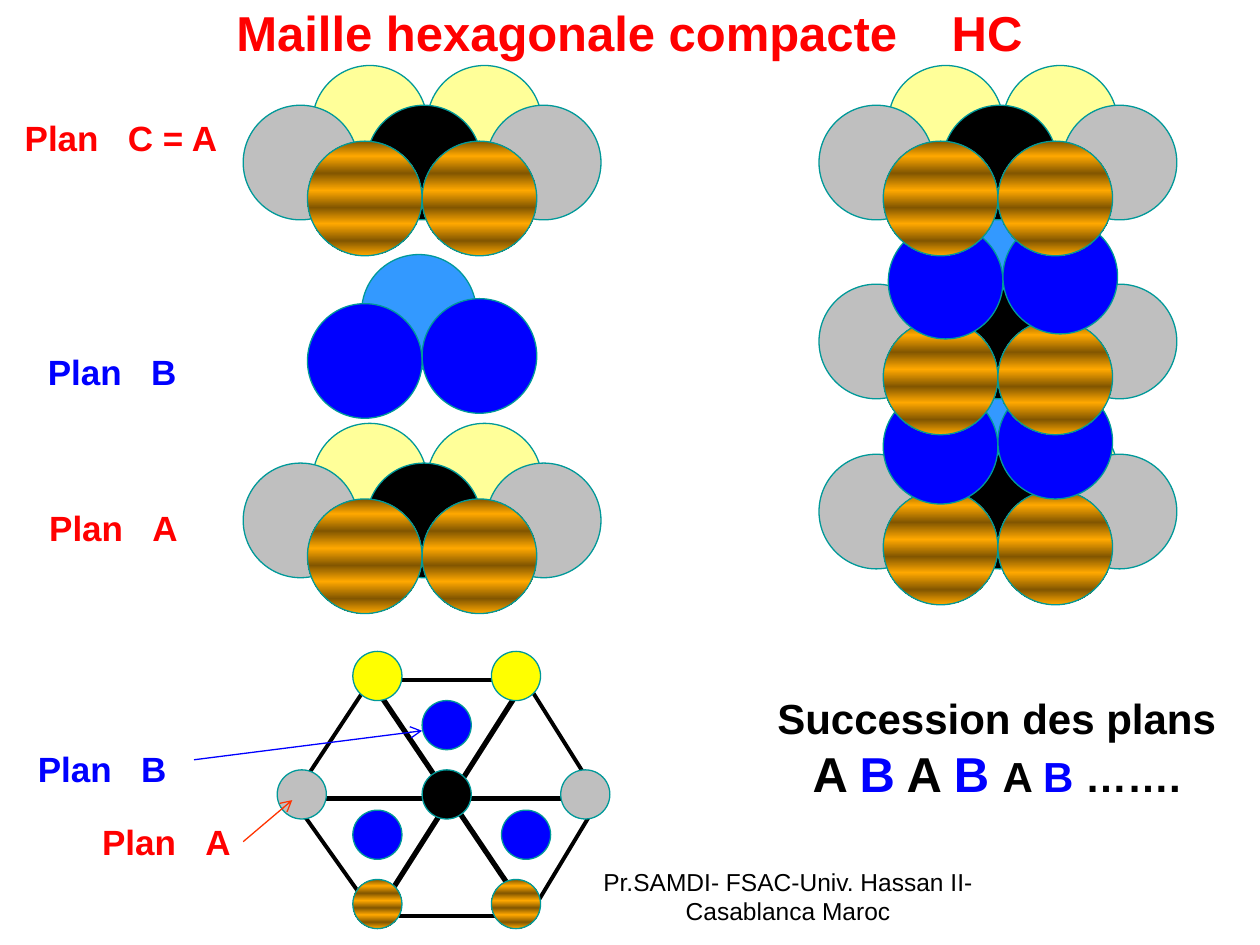
"""Build a slide on the stacked planes of a hexagonal close packed cell."""
import dataclasses
import itertools

import lxml.etree
import pptx
import pptx.dml.color
import pptx.enum.dml
import pptx.enum.shapes
import pptx.enum.text
import pptx.oxml.ns
import pptx.util


@dataclasses.dataclass(frozen=True)
class Theme:
    """Hold the colours, type sizes and line weights."""
    font: str = "Arial"
    red: str = "FF0000"
    blue: str = "0000FF"
    sky: str = "3399FF"
    black: str = "000000"
    white: str = "FFFFFF"
    grey: str = "BFBFBF"
    cream: str = "FFFF99"
    yellow: str = "FFFF00"
    teal: str = "009999"
    flame: str = "FF3300"
    gold: tuple = ("825600", "FFA800")
    stops: tuple = (0, 13, 28, 43, 58, 72, 87, 100)
    title: int = 28
    large: int = 24
    label: int = 20
    small: int = 14
    thin: float = 0.75
    edge: float = 2.25
    spoke: float = 3


THEME = Theme()
WIDE, HIGH = pptx.util.Inches(10), pptx.util.Inches(7.5)
COLS, ROWS = 100, 75
BALL, DOT = 9.1, 3.9
SPACE = 0.278

PLANE_A = [
    (5.5, 0, THEME.cream), (14.6, 0, THEME.cream), (9.8, 3.15, THEME.black),
    (0, 3.15, THEME.grey), (19.3, 3.15, THEME.grey),
    (5.1, 6, THEME.gold), (14.2, 6, THEME.gold),
]
PLANE_B = [(4.3, 0, THEME.sky), (0, 3.9, THEME.blue), (9.1, 3.5, THEME.blue)]
RING = [
    (22, 61.1, THEME.grey), (44.5, 61.1, THEME.grey),
    (39, 69.8, THEME.gold), (28, 69.8, THEME.gold),
    (39, 51.7, THEME.yellow), (28, 51.7, THEME.yellow),
]
HOLES = [(33.5, 55.6, THEME.blue), (39.8, 64.3, THEME.blue), (28, 64.3, THEME.blue)]
HEX = [(29.4, 54), (23.2, 63.4), (29.8, 72.7), (42, 72.7), (47.6, 63.4), (41.7, 54)]


def col(count):
    """Turn grid columns into a length."""
    return round(WIDE * count / COLS)


def row(count):
    """Turn grid rows into a length."""
    return round(HIGH * count / ROWS)


def place(left, top, width, height):
    """Turn a box in grid units into lengths."""
    return col(left), row(top), col(width), row(height)


def tint(code):
    """Turn a hex code into a colour."""
    return pptx.dml.color.RGBColor.from_string(code)


def paint(shape, hue):
    """Fill a shape with one colour, or with bands of two."""
    if isinstance(hue, str):
        shape.fill.solid()
        shape.fill.fore_color.rgb = tint(hue)
        return
    shape.fill.gradient()
    shape.fill.gradient_angle = 270
    bands = shape.element.spPr.find(".//" + pptx.oxml.ns.qn("a:gsLst"))
    for old in list(bands):
        bands.remove(old)
    for stop, code in zip(THEME.stops, itertools.cycle(hue)):
        mark = lxml.etree.SubElement(bands, pptx.oxml.ns.qn("a:gs"), pos=str(stop * 1000))
        lxml.etree.SubElement(mark, pptx.oxml.ns.qn("a:srgbClr"), val=code)


def ball(shapes, left, top, size, hue):
    """Draw one round atom."""
    shape = shapes.add_shape(pptx.enum.shapes.MSO_SHAPE.OVAL, *place(left, top, size, size))
    shape.shadow.inherit = False
    paint(shape, hue)
    shape.line.color.rgb = tint(THEME.teal)
    shape.line.width = pptx.util.Pt(THEME.thin)


def cluster(slide, atoms, size, left=0, top=0):
    """Draw a group of atoms from one corner."""
    group = slide.shapes.add_group_shape()
    for across, down, hue in atoms:
        ball(group.shapes, left + across, top + down, size, hue)


def stroke(shapes, start, end, hue, weight, arrow=False):
    """Draw a straight line, with an arrowhead if asked."""
    line = shapes.add_connector(
        pptx.enum.shapes.MSO_CONNECTOR.STRAIGHT,
        col(start[0]), row(start[1]), col(end[0]), row(end[1]))
    line.line.color.rgb = tint(hue)
    line.line.width = pptx.util.Pt(weight)
    if arrow:
        pen = line.line._get_or_add_ln()
        lxml.etree.SubElement(pen, pptx.oxml.ns.qn("a:tailEnd"), type="arrow")
    lxml.etree.SubElement(line.element.spPr, pptx.oxml.ns.qn("a:effectLst"))
    return line


def style(font, size, hue, bold=True):
    """Set the face, size and colour of a font."""
    font.name = THEME.font
    font.size = pptx.util.Pt(size)
    font.bold = bold
    font.color.rgb = tint(hue)


def panel(slide, box, wrap):
    """Add a white text panel and return it with its paragraph."""
    shape = slide.shapes.add_shape(pptx.enum.shapes.MSO_SHAPE.RECTANGLE, *place(*box))
    shape.shadow.inherit = False
    paint(shape, THEME.white)
    shape.line.fill.background()
    frame = shape.text_frame
    frame.word_wrap = wrap
    frame.auto_size = pptx.enum.text.MSO_AUTO_SIZE.SHAPE_TO_FIT_TEXT
    frame.vertical_anchor = pptx.enum.text.MSO_ANCHOR.MIDDLE
    para = frame.paragraphs[0]
    para.alignment = pptx.enum.text.PP_ALIGN.CENTER
    return shape, para


def label(slide, box, words, hue, size=THEME.label, gap=3):
    """Write two words parted by a gap some spaces wide."""
    shape, para = panel(slide, box, False)
    style(para.font, size, hue)
    first, last = words
    for text in (first, " ", last):
        run = para.add_run()
        run.text = text
        if text == " ":
            extra = round((gap - 1) * SPACE * size * 100)
            run.font._element.set("spc", str(extra))
    return shape


def order(slide):
    """Write the order in which the planes follow."""
    para = panel(slide, (60.2, 54.4, 37.8, 9.8), True)[1]
    para.font.name = THEME.font
    para.font.bold = True
    for text, size, hue in [
        ("Succession des plans ", THEME.large, THEME.black),
        ("A ", THEME.title, THEME.black), ("B", THEME.title, THEME.blue),
        (" A ", THEME.title, THEME.black), ("B ", THEME.title, THEME.blue),
        ("A ", THEME.large, THEME.black), ("B ", THEME.large, THEME.blue),
        ("…….", THEME.large, THEME.black),
    ]:
        run = para.add_run()
        run.text = text
        run.font.size = pptx.util.Pt(size)
        run.font.color.rgb = tint(hue)


def frame_hex(slide):
    """Draw the sides and long diagonals of the hexagon."""
    shapes = slide.shapes.add_group_shape().shapes
    for start, end in zip(HEX, HEX[1:] + HEX[:1]):
        stroke(shapes, start, end, THEME.black, THEME.edge)
    for start, end in zip(HEX[:3], HEX[3:]):
        stroke(shapes, start, end, THEME.black, THEME.spoke)


def credit(slide):
    """Write the author line."""
    frame = slide.shapes.add_textbox(*place(46.7, 68.3, 31.7, 5.2)).text_frame
    frame.word_wrap = True
    para = frame.paragraphs[0]
    para.text = "Pr.SAMDI- FSAC-Univ. Hassan II- Casablanca Maroc"
    para.alignment = pptx.enum.text.PP_ALIGN.CENTER
    style(para.font, THEME.small, THEME.black, False)


def main():
    """Build and save the slide."""
    deck = pptx.Presentation()
    deck.slide_width, deck.slide_height = WIDE, HIGH
    slide = deck.slides.add_slide(deck.slide_layouts[6])
    label(slide, (17.7, -0.3, 64.5, 5.7), ("Maille hexagonale compacte", "HC"),
          THEME.red, THEME.title, 4)
    for atoms, left, top in [
        (PLANE_A, 19.3, 33.6), (PLANE_B, 24.4, 20.2), (PLANE_A, 19.3, 5.2),
        (PLANE_A, 65, 32.9), (PLANE_B, 70.1, 27), (PLANE_A, 65, 19.4),
        (PLANE_B, 70.5, 13.9), (PLANE_A, 65, 5.2),
    ]:
        cluster(slide, atoms, BALL, left, top)
    label(slide, (2.9, 39.7, 12.2, 4.4), ("Plan", "A"), THEME.red)
    label(slide, (2.8, 27.3, 12.2, 4.4), ("Plan", "B"), THEME.blue)
    label(slide, (0.9, 8.7, 17.4, 4.4), ("Plan", "C = A"), THEME.red)
    order(slide)
    frame_hex(slide)
    ball(slide.shapes, 33.5, 61.1, DOT, THEME.black)
    cluster(slide, RING, DOT)
    base = label(slide, (7.1, 64.6, 12.2, 4.4), ("Plan", "A"), THEME.red)
    arrow = stroke(slide.shapes, (19.3, 66.8), (23.2, 63.5), THEME.flame, THEME.thin, True)
    arrow.begin_connect(base, 3)
    cluster(slide, HOLES, DOT)
    stroke(slide.shapes, (15.4, 60.3), (33.5, 58), THEME.blue, THEME.thin, True)
    label(slide, (2, 58.8, 12.2, 4.4), ("Plan", "B"), THEME.blue)
    credit(slide)
    deck.save("out.pptx")


if __name__ == "__main__":
    main()
